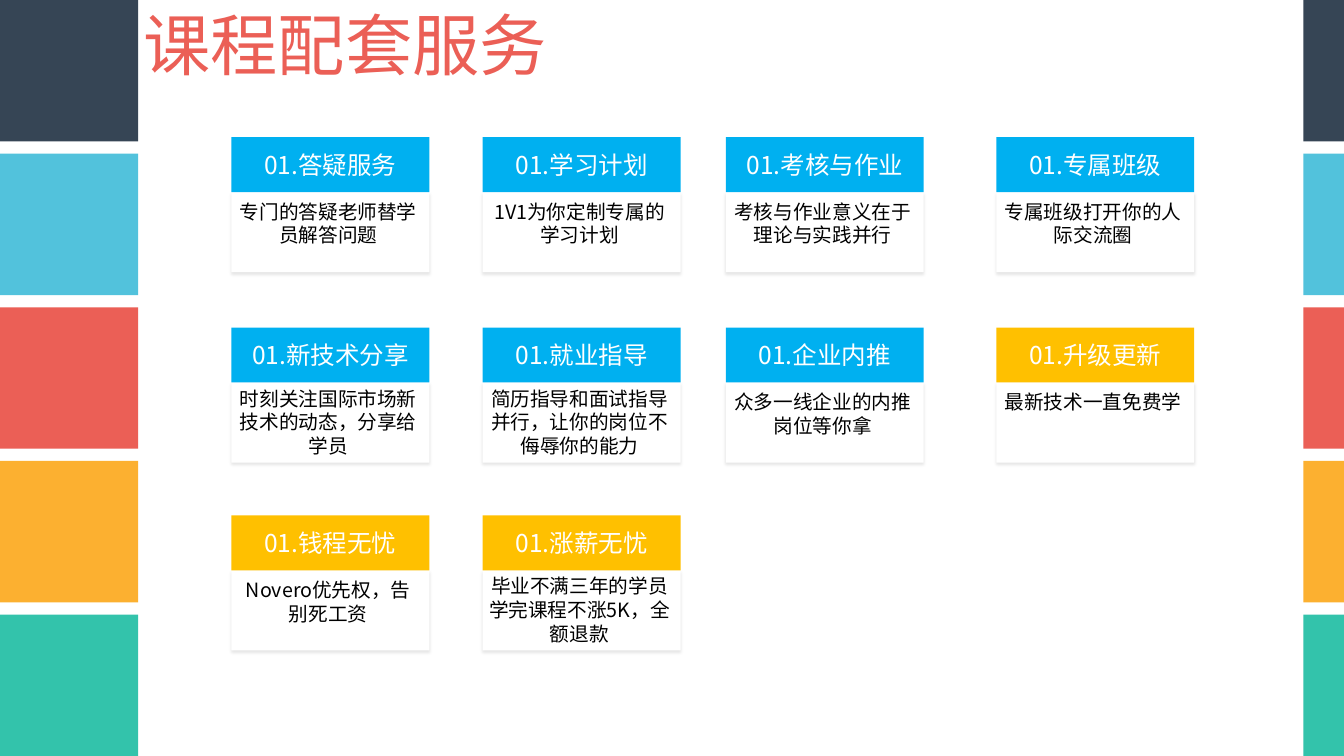
from math import ceil

from lxml import etree
from pptx import Presentation
from pptx.dml.color import RGBColor
from pptx.enum.shapes import MSO_SHAPE
from pptx.enum.text import MSO_ANCHOR, MSO_AUTO_SIZE, PP_ALIGN
from pptx.oxml.ns import qn
from pptx.util import Pt

PX = 9144
RECT = MSO_SHAPE.RECTANGLE
TOP, MIDDLE = MSO_ANCHOR.TOP, MSO_ANCHOR.MIDDLE
LEFT, CENTER = PP_ALIGN.LEFT, PP_ALIGN.CENTER
GROW = MSO_AUTO_SIZE.SHAPE_TO_FIT_TEXT
FONT = "Noto Sans CJK SC"

WHITE = RGBColor(0xFF, 0xFF, 0xFF)
BLACK = RGBColor(0x00, 0x00, 0x00)
NAVY = RGBColor(0x36, 0x45, 0x55)
SKY = RGBColor(0x52, 0xC2, 0xDC)
RED = RGBColor(0xEB, 0x5F, 0x56)
ORANGE = RGBColor(0xFC, 0xB0, 0x30)
GREEN = RGBColor(0x33, 0xC3, 0xAB)
BLUE = RGBColor(0x00, 0xB0, 0xF0)
GOLD = RGBColor(0xFF, 0xC0, 0x00)

STRIPES = [NAVY, SKY, RED, ORANGE, GREEN]
COLUMNS = [434, 905, 1361, 1868]
ROWS = [257, 614, 966]
SERVICES = [
    [("01.答疑服务", "专门的答疑老师替学员解答问题", BLUE),
     ("01.学习计划", "1V1为你定制专属的学习计划", BLUE),
     ("01.考核与作业", "考核与作业意义在于理论与实践并行", BLUE),
     ("01.专属班级", "专属班级打开你的人际交流圈", BLUE)],
    [("01.新技术分享", "时刻关注国际市场新技术的动态，分享给学员", BLUE),
     ("01.就业指导", "简历指导和面试指导并行，让你的岗位不侮辱你的能力", BLUE),
     ("01.企业内推", "众多一线企业的内推岗位等你拿", BLUE),
     ("01.升级更新", "最新技术一直免费学", GOLD)],
    [("01.钱程无忧", "Novero优先权，告别死工资", GOLD),
     ("01.涨薪无忧", "毕业不满三年的学员学完课程不涨5K，全额退款", GOLD)],
]


def emu(*lengths):
    """Turn px lengths into EMU."""
    return [n * PX for n in lengths]


def add_rect(s, x, y, w, h, color):
    """Add a plain filled rectangle."""
    sp = s.shapes.add_shape(RECT, *emu(x, y, w, h))
    sp.shadow.inherit = False
    sp.fill.solid()
    sp.fill.fore_color.rgb = color
    sp.line.fill.background()
    return sp


def add_shadow(sp):
    """Give a shape a soft shadow below it."""
    effects = sp._element.spPr.find(qn("a:effectLst"))
    shadow = etree.SubElement(effects, qn("a:outerShdw"), blurRad=str(Pt(4)),
                              dist=str(Pt(3)), dir="5400000", rotWithShape="0")
    color = etree.SubElement(shadow, qn("a:srgbClr"), val="000000")
    etree.SubElement(color, qn("a:alpha"), val="9000")


def set_text(sp, text, size, color, align, anchor, spacing=None):
    """Write one formatted paragraph into a shape."""
    tf = sp.text_frame
    tf.text = text
    tf.vertical_anchor = anchor
    p = tf.paragraphs[0]
    p.alignment = align
    p.line_spacing = spacing
    font = p.runs[0].font
    font.size = Pt(size)
    font.name = FONT
    font.color.rgb = color
    etree.SubElement(p.runs[0]._r.get_or_add_rPr(), qn("a:ea"), typeface=FONT)
    return tf


def add_stripes(s, x, w):
    """Stack the coloured blocks along one edge of the slide."""
    for i, color in enumerate(STRIPES):
        add_rect(s, x, i * 288, w, 265, color)


def add_title(s, x, y, w, h):
    """Place the slide title."""
    sp = s.shapes.title
    sp.left, sp.top, sp.width, sp.height = emu(x, y, w, h)
    tf = set_text(sp, "课程配套服务", 90.7, RED, LEFT, TOP, Pt(110))
    tf.word_wrap = False
    tf.auto_size = GROW


def add_service(s, x, y, w, h, heading, detail, color):
    """Build one card: a coloured heading above a shadowed panel."""
    head_h = 103
    add_shadow(add_rect(s, x, y + head_h, w, h - head_h, WHITE))
    head = add_rect(s, x, y, w, head_h, color)
    tf = set_text(head, heading, 33.1, WHITE, CENTER, MIDDLE)
    tf.margin_left, tf.margin_right = emu(19, 19)
    tf.margin_top, tf.margin_bottom = emu(9, 9)
    lines = ceil(len(detail) / 9)
    gap = 9 if lines < 3 else 2
    box = s.shapes.add_textbox(*emu(x, y + head_h + gap, w - 8, 10 + 45 * lines))
    tf = set_text(box, detail, 26.5, BLACK, CENTER, TOP, Pt(32))
    tf.word_wrap = True
    tf.auto_size = GROW


def main():
    """Build the slide and save it."""
    prs = Presentation()
    prs.slide_width, prs.slide_height = emu(2520, 1417)
    s = prs.slides.add_slide(prs.slide_layouts[5])
    add_stripes(s, 0, 259)
    add_stripes(s, 2444, 76)
    add_title(s, 259, 0, 784, 163)
    for y, row in zip(ROWS, SERVICES):
        for x, service in zip(COLUMNS, row):
            add_service(s, x, y, 371, 253, *service)
    prs.save("out.pptx")


if __name__ == "__main__":
    main()
